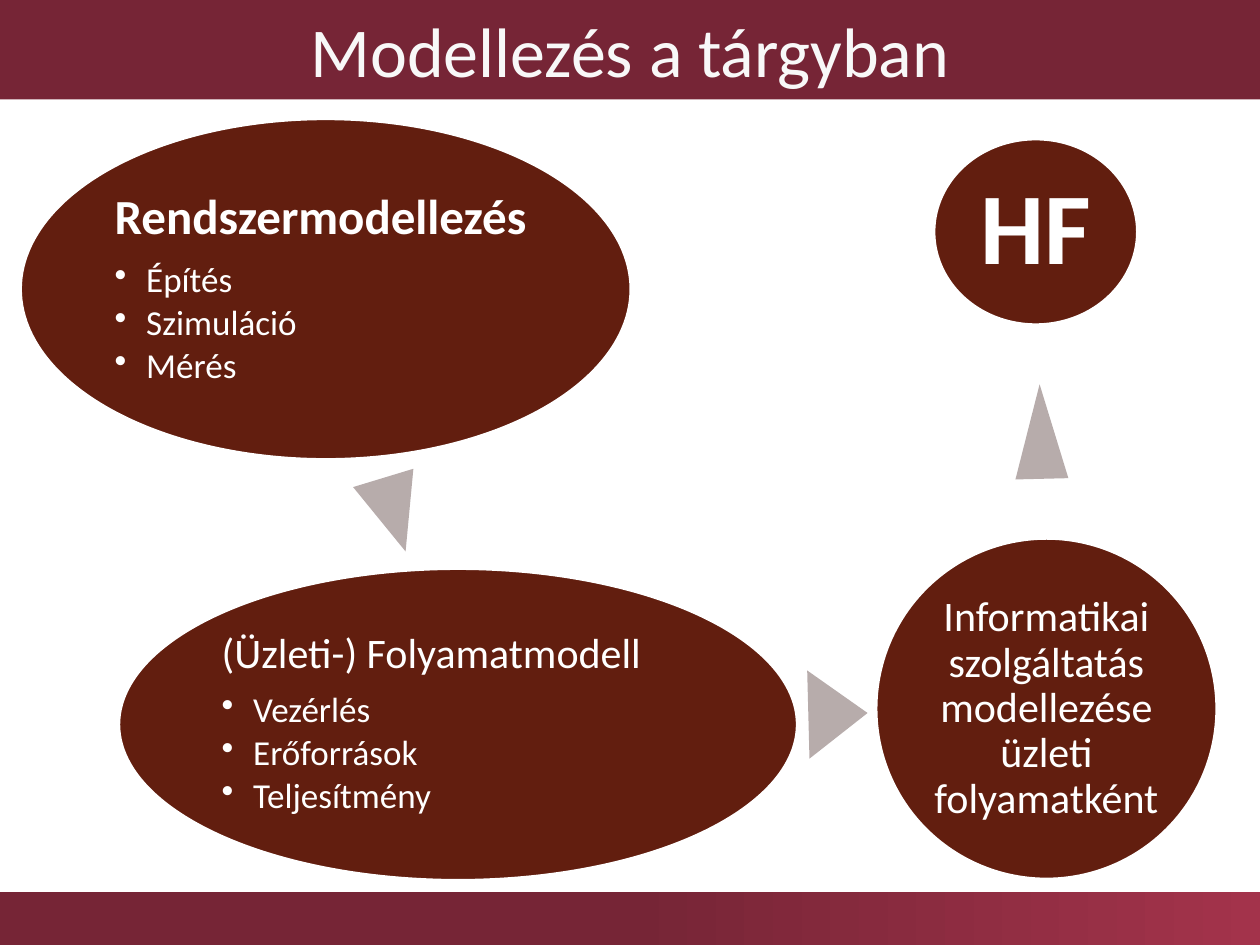
import math

import pptx
import pptx.dml.color
import pptx.enum.shapes
import pptx.enum.text
import pptx.util
from lxml import etree
from pptx.oxml.ns import qn

SHAPE = pptx.enum.shapes.MSO_SHAPE
ALIGN = pptx.enum.text.PP_ALIGN
WIDTH, HEIGHT = 10, 7.5
FONT = "Calibri"
COLORS = {
    "bar": "762536", "bar_end": "A3334B", "title": "F8F8F8",
    "oval": "621E0F", "arrow": "B7ACAB", "white": "FFFFFF",
}

# Content; places are left, top, width, height in percent of the slide
TITLE = "Modellezés a tárgyban"
TITLE_BAR = (0, 0, 100, 10.53)
FOOTER_BAR = (0, 94.4, 100, 5.6)
STEPS = [
    {"place": (1.6, 12.53, 48.5, 36.13), "heading": "Rendszermodellezés",
     "size": 28, "bold": True, "inset": 0.04,
     "bullets": ["Építés", "Szimuláció", "Mérés"]},
    {"place": (9.4, 60.13, 53.9, 33.07), "heading": "(Üzleti-) Folyamatmodell",
     "size": 24, "bold": False, "inset": 0.03,
     "bullets": ["Vezérlés", "Erőforrások", "Teljesítmény"]},
    {"place": (69.5, 56.93, 27.1, 36.13), "size": 24, "bold": False, "inset": 0.03,
     "heading": "Informatikai szolgáltatás modellezése üzleti folyamatként",
     "bullets": []},
    {"place": (74.1, 14.67, 16.2, 19.73), "heading": "HF",
     "size": 58, "bold": True, "inset": 0.08, "bullets": []},
]
ARROWS = [  # place, rotation
    ((28.8, 50.4, 5, 8.13), 163.1),
    ((63, 72.4, 7, 6.27), 88.5),
    ((80.5, 40.67, 4.2, 10), 358.6),
]


def color(name):
    return pptx.dml.color.RGBColor.from_string(COLORS[name])


def inches(place):
    return [pptx.util.Inches(share * side / 100)
            for share, side in zip(place, (WIDTH, HEIGHT) * 2)]


def add_shape(page, kind, place, fill, line=None):
    shape = page.shapes.add_shape(kind, *inches(place))
    shape.shadow.inherit = False
    shape.fill.solid()
    shape.fill.fore_color.rgb = color(fill)
    if line:
        shape.line.color.rgb = color(line)
        shape.line.width = pptx.util.Pt(2)
    else:
        shape.line.fill.background()
    return shape


def set_frame(box, inset):
    frame = box.text_frame
    frame.word_wrap = True
    frame.vertical_anchor = pptx.enum.text.MSO_ANCHOR.MIDDLE
    for side in ("left", "right", "top", "bottom"):
        setattr(frame, "margin_" + side, pptx.util.Inches(inset))
    return frame


def write(para, text, *, size, ink="white", bold=False, align=ALIGN.LEFT,
          spacing=1.0, after=0, bullet=False):
    para.alignment = align
    para.line_spacing = spacing
    para.space_after = pptx.util.Pt(size * after)
    if bullet:
        props = para._p.get_or_add_pPr()
        indent = pptx.util.Inches(0.25)
        props.set("marL", str(indent))
        props.set("indent", str(-indent))
        etree.SubElement(props, qn("a:buChar")).set("char", "•")
    span = para.add_run()
    span.text = text
    span.font.name = FONT
    span.font.size = pptx.util.Pt(size)
    span.font.bold = bold
    span.font.color.rgb = color(ink)


def add_step(page, step):
    add_shape(page, SHAPE.OVAL, step["place"], "oval", line="white")
    # The text fills the rectangle inscribed in the oval
    left, top, width, height = step["place"]
    side = 1 / math.sqrt(2)
    margin = (1 - side) / 2
    inner = (left + width * margin, top + height * margin, width * side, height * side)
    frame = set_frame(page.shapes.add_textbox(*inches(inner)), step["inset"])
    write(frame.paragraphs[0], step["heading"], size=step["size"], bold=step["bold"],
          align=ALIGN.LEFT if step["bullets"] else ALIGN.CENTER,
          spacing=0.9, after=0.35)
    for item in step["bullets"]:
        write(frame.add_paragraph(), item, size=20, spacing=0.9, after=0.15, bullet=True)


def main():
    deck = pptx.Presentation()
    deck.slide_width = pptx.util.Inches(WIDTH)
    deck.slide_height = pptx.util.Inches(HEIGHT)
    page = deck.slides.add_slide(deck.slide_layouts[6])

    # Footer bar: plain to the middle, then fading to the right
    footer = add_shape(page, SHAPE.RECTANGLE, FOOTER_BAR, "bar")
    footer.fill.gradient()
    footer.fill.gradient_angle = 0
    stops = zip(footer.fill.gradient_stops, ((0.5, "bar"), (1, "bar_end")))
    for stop, (position, name) in stops:
        stop.position = position
        stop.color.rgb = color(name)

    # Title bar
    title = add_shape(page, SHAPE.RECTANGLE, TITLE_BAR, "bar")
    write(set_frame(title, 0.05).paragraphs[0], TITLE, size=40, ink="title",
          align=ALIGN.CENTER)

    # Steps and the arrows between them
    for step in STEPS:
        add_step(page, step)
    for place, rotation in ARROWS:
        arrow = add_shape(page, SHAPE.ISOSCELES_TRIANGLE, place, "arrow")
        arrow.rotation = rotation

    deck.save("out.pptx")


if __name__ == "__main__":
    main()
